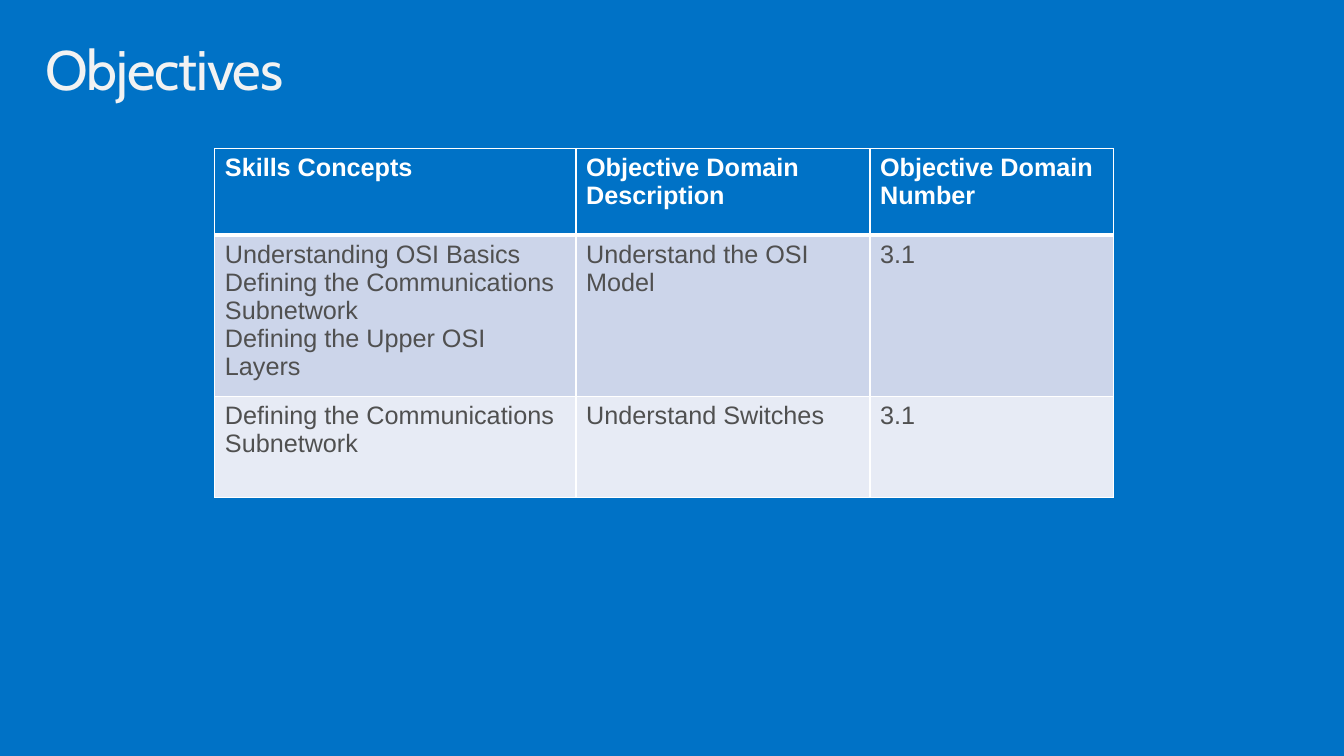
from lxml.etree import SubElement
from pptx import Presentation
from pptx.dml.color import RGBColor as RGB
from pptx.enum.text import MSO_ANCHOR as ANCHOR, PP_ALIGN as ALIGN
from pptx.oxml.ns import qn
from pptx.util import Pt

COLORS = {
    "blue": "0072C6",
    "white": "FFFFFF",
    "title": "F2F2F2",
    "body": "505050",
    "band_dark": "CCD5EA",
    "band_light": "E7EBF5",
}

OBJECTIVES = [
    ["Skills Concepts", "Objective Domain Description", "Objective Domain Number"],
    [
        "Understanding OSI Basics\n"
        "Defining the Communications Subnetwork\n"
        "Defining the Upper OSI Layers",
        "Understand the OSI Model",
        "3.1",
    ],
    ["Defining the Communications Subnetwork", "Understand Switches", "3.1"],
]


class Deck:
    def __init__(self, width, height):
        self.prs = Presentation()
        self.prs.slide_width, self.prs.slide_height = Pt(width), Pt(height)
        self.slide = self.prs.slides.add_slide(self.prs.slide_layouts[6])

    def color(self, name):
        return RGB.from_string(COLORS[name])

    def background(self, name):
        fill = self.slide.background.fill
        fill.solid()
        fill.fore_color.rgb = self.color(name)

    def font(self, p, face, size, color, bold=False):
        p.alignment = ALIGN.LEFT
        p.font.name, p.font.size, p.font.bold = face, Pt(size), bold
        p.font.color.rgb = self.color(color)

    def title(self, text, x, y, w, h):
        tf = self.slide.shapes.add_textbox(Pt(x), Pt(y), Pt(w), Pt(h)).text_frame
        tf.word_wrap = True
        tf.vertical_anchor = ANCHOR.TOP
        tf.margin_left = tf.margin_right = Pt(11.5)
        tf.margin_top = tf.margin_bottom = Pt(7.2)
        p = tf.paragraphs[0]
        r = p.add_run()
        r.text = text
        p.line_spacing = 0.9
        self.font(p, "Cabin", 39.7, "title")
        r.font._element.set("spc", "-80")

    def border(self, cell, side, width):
        ln = SubElement(cell._tc.get_or_add_tcPr(), qn(f"a:ln{side}"), w=str(Pt(width)))
        fill = SubElement(ln, qn("a:solidFill"))
        SubElement(fill, qn("a:srgbClr"), val=COLORS["white"])

    def cell(self, cell, text, row):
        header = row == 0
        widths = {"L": 1, "R": 1, "T": 3 if row == 1 else 1, "B": 3 if header else 1}
        for side, width in widths.items():
            self.border(cell, side, width)
        cell.fill.solid()
        cell.fill.fore_color.rgb = self.color(("blue", "band_dark", "band_light")[row])
        cell.margin_left = cell.margin_right = Pt(7.2)
        cell.margin_top = cell.margin_bottom = Pt(3.6)
        cell.text = text
        for p in cell.text_frame.paragraphs:
            self.font(p, "Arial", 18, "white" if header else "body", header)

    def table(self, rows, x, y, widths, heights):
        table = self.slide.shapes.add_table(
            len(rows), len(widths), Pt(x), Pt(y), Pt(sum(widths)), Pt(sum(heights))
        ).table
        for column, width in zip(table.columns, widths):
            column.width = Pt(width)
        for i, (texts, height) in enumerate(zip(rows, heights)):
            table.rows[i].height = Pt(height)
            for j, text in enumerate(texts):
                self.cell(table.cell(i, j), text, i)


def main():
    deck = Deck(960, 540)
    deck.background("blue")
    deck.title("Objectives", 21, 23, 918, 70.5)
    deck.table(OBJECTIVES, 153.5, 106, [258, 210, 174], [62, 107, 72])
    deck.prs.save("out.pptx")


if __name__ == "__main__":
    main()
